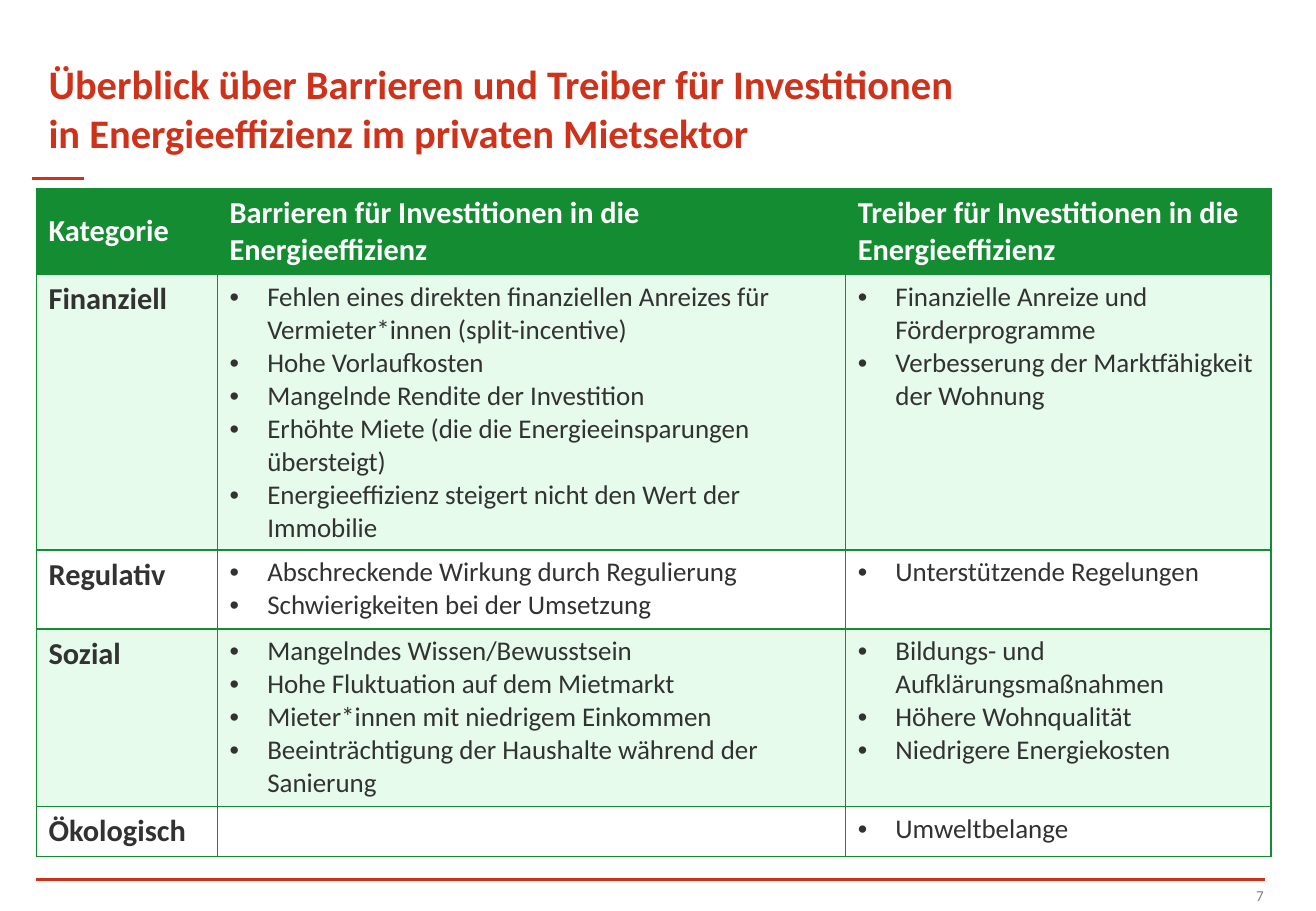
from lxml import etree
from pptx import Presentation
from pptx.dml.color import RGBColor
from pptx.enum.shapes import MSO_CONNECTOR
from pptx.enum.text import MSO_ANCHOR, PP_ALIGN
from pptx.oxml.ns import qn
from pptx.util import Inches, Pt

STRAIGHT = MSO_CONNECTOR.STRAIGHT
TOP, MIDDLE, BOTTOM = MSO_ANCHOR.TOP, MSO_ANCHOR.MIDDLE, MSO_ANCHOR.BOTTOM
LEFT, RIGHT = PP_ALIGN.LEFT, PP_ALIGN.RIGHT

FONT = "Calibri"
COLORS = {
    "red": "CE321A",
    "green": "148C32",
    "band": "84EE9F",
    "text": "323232",
    "white": "FFFFFF",
    "gray": "808080",
}
BAND_OPACITY = 20  # percent

TITLE = ("Überblick über Barrieren und Treiber für Investitionen "
         "in Energieeffizienz im privaten Mietsektor")
PAGE_NUMBER = "7"
HEADINGS = ["Kategorie",
            "Barrieren für Investitionen in die Energieeffizienz",
            "Treiber für Investitionen in die Energieeffizienz"]
CATEGORIES = [
    ("Finanziell",
     ["Fehlen eines direkten finanziellen Anreizes für Vermieter*innen (split-incentive)",
      "Hohe Vorlaufkosten",
      "Mangelnde Rendite der Investition",
      "Erhöhte Miete (die die Energieeinsparungen übersteigt)",
      "Energieeffizienz steigert nicht den Wert der Immobilie"],
     ["Finanzielle Anreize und Förderprogramme",
      "Verbesserung der Marktfähigkeit der Wohnung"]),
    ("Regulativ",
     ["Abschreckende Wirkung durch Regulierung",
      "Schwierigkeiten bei der Umsetzung"],
     ["Unterstützende Regelungen"]),
    ("Sozial",
     ["Mangelndes Wissen/Bewusstsein",
      "Hohe Fluktuation auf dem Mietmarkt",
      "Mieter*innen mit niedrigem Einkommen",
      "Beeinträchtigung der Haushalte während der Sanierung"],
     ["Bildungs- und Aufklärungsmaßnahmen",
      "Höhere Wohnqualität",
      "Niedrigere Energiekosten"]),
    ("Ökologisch", [], ["Umweltbelange"]),
]
COLUMN_WIDTHS = [1.49, 5.17, 3.5]
ROW_HEIGHTS = [0.71, 2.27, 0.65, 1.46, 0.41]
RULES = [(0.3, 10.41, 7.24), (0.26, 0.69, 1.47)]  # from x, to x, y


def rgb(name):
    return RGBColor.from_string(COLORS[name])


def write(frame, lines, size, color, bold=False, align=LEFT):
    frame.text = "\n".join(lines)
    for para in frame.paragraphs:
        para.alignment = align
        for span in para.runs:
            span.font.name = FONT
            span.font.size = Pt(size)
            span.font.bold = bold
            span.font.color.rgb = rgb(color)


def add_bullets(frame):
    for para in frame.paragraphs:
        properties = para._p.get_or_add_pPr()
        properties.set("marL", str(Inches(0.31)))
        properties.set("indent", str(-Inches(0.31)))
        etree.SubElement(properties, qn("a:buFont"), typeface="Arial")
        etree.SubElement(properties, qn("a:buChar"), char="•")


def add_borders(cell):
    properties = cell._tc.get_or_add_tcPr()
    for side in ("lnL", "lnR", "lnT", "lnB"):
        line = etree.SubElement(properties, qn("a:" + side), w=str(Pt(1)))
        fill = etree.SubElement(line, qn("a:solidFill"))
        etree.SubElement(fill, qn("a:srgbClr"), val=COLORS["green"])


def fill_cell(cell, color, opacity=100):
    cell.fill.solid()
    cell.fill.fore_color.rgb = rgb(color)
    if opacity < 100:
        value = cell._tc.tcPr.find(qn("a:solidFill")).find(qn("a:srgbClr"))
        etree.SubElement(value, qn("a:alpha"), val=str(opacity * 1000))


def add_rule(slide, start, end, y):
    rule = slide.shapes.add_connector(
        STRAIGHT, Inches(start), Inches(y), Inches(end), Inches(y))
    rule.line.color.rgb = rgb("red")
    rule.line.width = Pt(1.5)
    etree.SubElement(rule._element.spPr, qn("a:effectLst"))


def add_title(slide):
    title = slide.shapes.title
    title.left, title.top = Inches(0.3), Inches(0.4)
    title.width, title.height = Inches(7.72), Inches(0.94)
    title.text_frame.vertical_anchor = BOTTOM
    write(title.text_frame, [TITLE], 24, "red", bold=True)


def add_page_number(slide):
    box = slide.shapes.add_textbox(
        Inches(8.17), Inches(7.18), Inches(2.33), Inches(0.32))
    box.text_frame.word_wrap = True
    box.text_frame.vertical_anchor = BOTTOM
    write(box.text_frame, [PAGE_NUMBER], 9, "gray", align=RIGHT)


def add_overview(slide):
    table = slide.shapes.add_table(
        len(ROW_HEIGHTS), len(COLUMN_WIDTHS), Inches(0.3), Inches(1.55),
        Inches(sum(COLUMN_WIDTHS)), Inches(sum(ROW_HEIGHTS))).table
    table.first_row = table.horz_banding = False
    for column, width in zip(table.columns, COLUMN_WIDTHS):
        column.width = Inches(width)
    for row, height in zip(table.rows, ROW_HEIGHTS):
        row.height = Inches(height)

    for cell, heading in zip(table.rows[0].cells, HEADINGS):
        add_borders(cell)
        fill_cell(cell, "green")
        cell.vertical_anchor = MIDDLE
        write(cell.text_frame, [heading], 18, "white", bold=True)

    for number, (category, *lists) in enumerate(CATEGORIES, start=1):
        cells = list(table.rows[number].cells)
        for cell in cells:
            add_borders(cell)
            cell.vertical_anchor = TOP
            if number % 2:
                fill_cell(cell, "band", BAND_OPACITY)
            else:
                cell.fill.background()
        write(cells[0].text_frame, [category], 18, "text", bold=True)
        for cell, items in zip(cells[1:], lists):
            if items:
                write(cell.text_frame, items, 16, "text")
                add_bullets(cell.text_frame)


def main():
    deck = Presentation()
    deck.slide_width, deck.slide_height = Inches(10.83), Inches(7.5)
    slide = deck.slides.add_slide(deck.slide_layouts.get_by_name("Title Only"))
    add_page_number(slide)
    for start, end, y in RULES:
        add_rule(slide, start, end, y)
    add_title(slide)
    add_overview(slide)
    deck.save("out.pptx")


if __name__ == "__main__":
    main()
